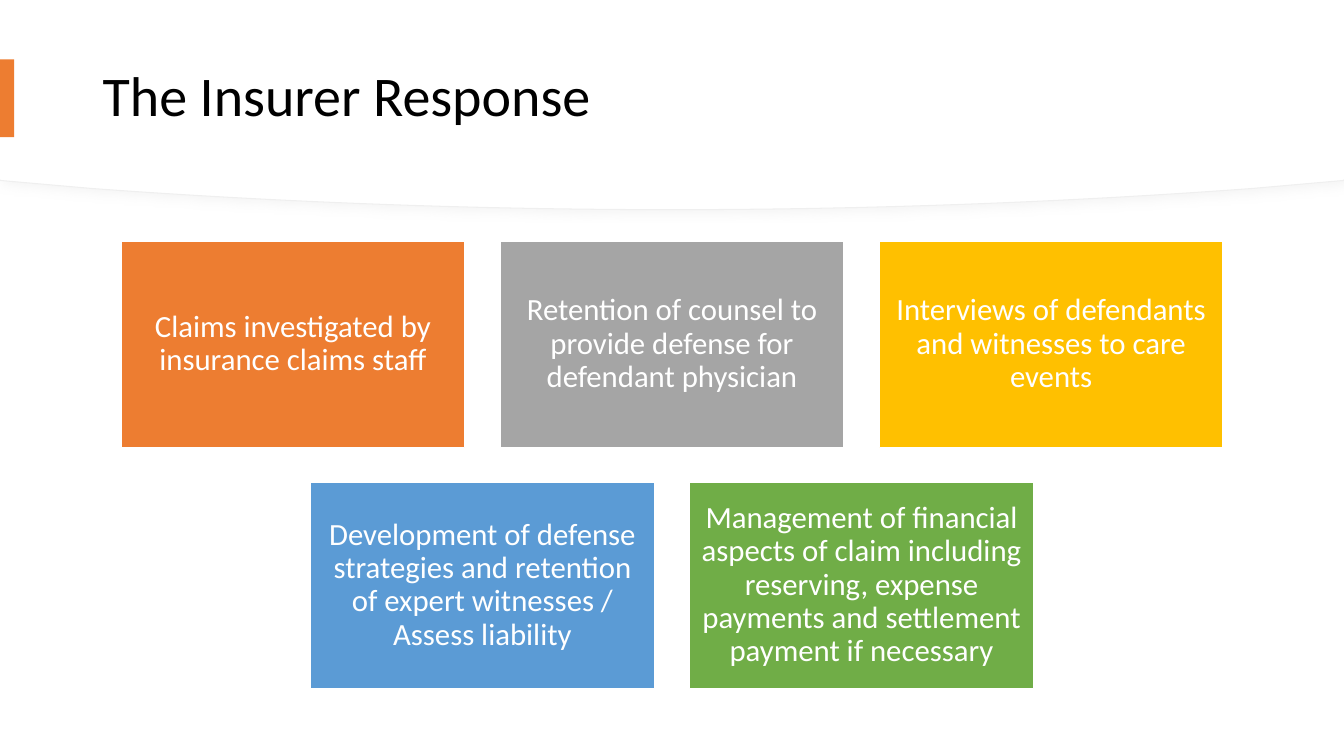
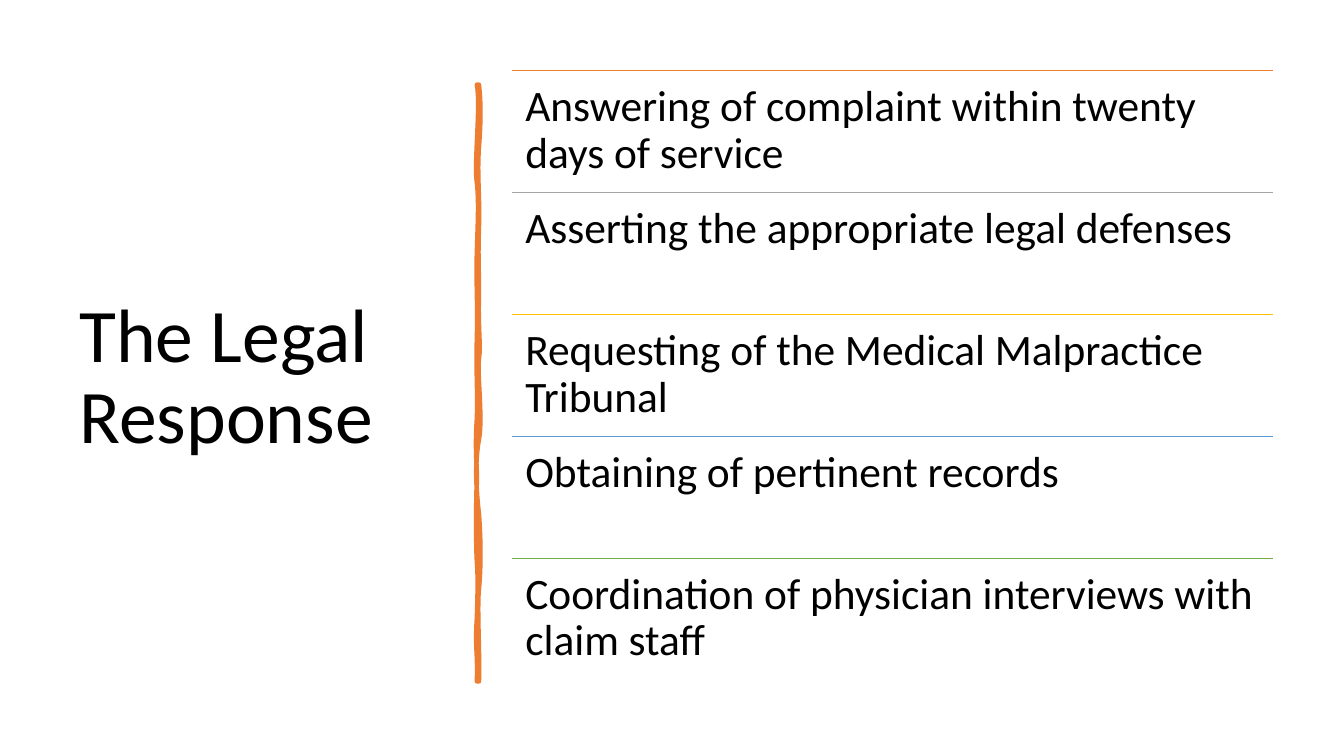
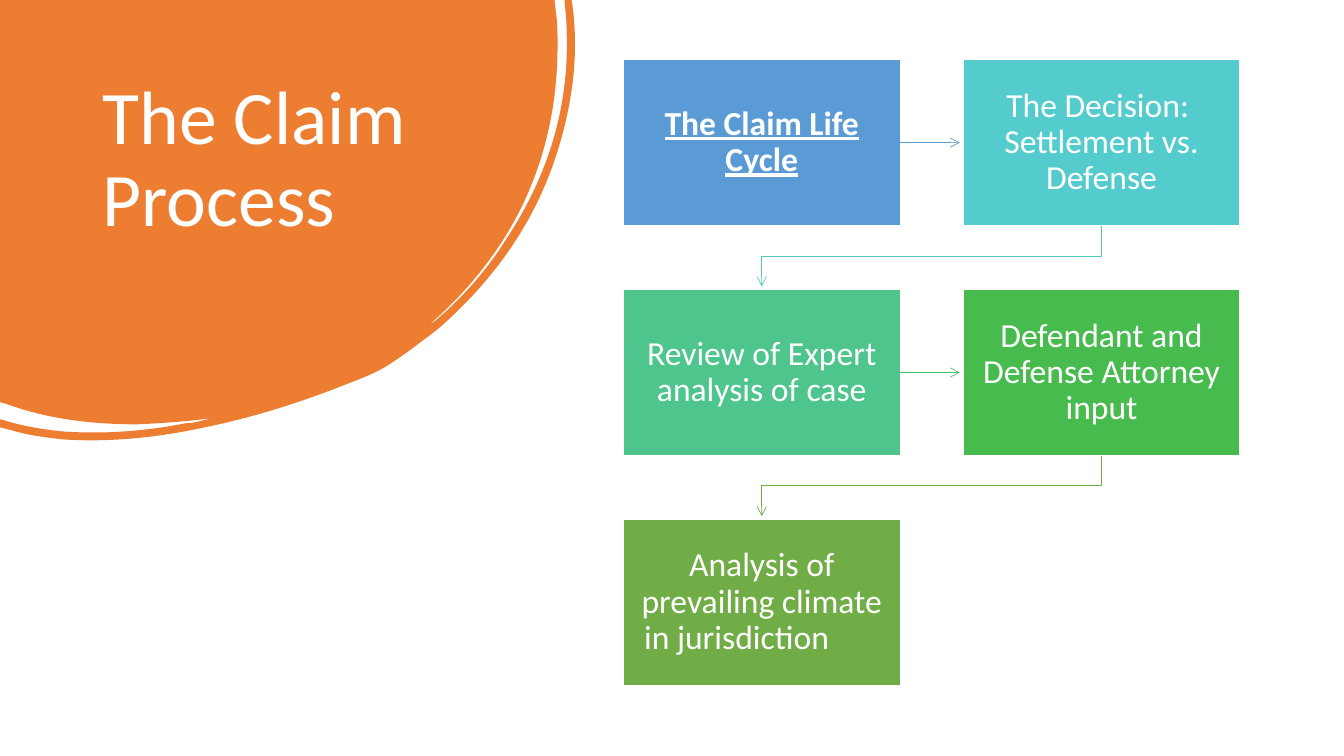
import collections
import dataclasses

import lxml.etree
import pptx
import pptx.dml.color
import pptx.enum.shapes
import pptx.enum.text
import pptx.oxml.ns
import pptx.util

SCALE = 9144
TAB_PER_POINT = 44450
ALIGN = pptx.enum.text.PP_ALIGN
ANCHOR = pptx.enum.text.MSO_ANCHOR
CONNECTOR = pptx.enum.shapes.MSO_CONNECTOR
Box = collections.namedtuple("Box", "x y w h")


@dataclasses.dataclass(frozen=True)
class Theme:
    """Colours, font and type sizes shared by the deck."""

    font: str = "Calibri"
    black: str = "000000"
    white: str = "FFFFFF"
    orange: str = "ED7D31"
    gray: str = "A5A5A5"
    gold: str = "FFC000"
    blue: str = "5B9BD5"
    green: str = "70AD47"
    cyan: str = "54CCCD"
    teal: str = "52CAB8"
    mint: str = "4DC58D"
    leaf: str = "49BF64"
    grass: str = "48BB4F"
    hairline: str = "EFEFEF"
    shade: str = "D9D9D9"
    header_size: int = 40
    title_size: int = 54
    card_size: int = 22
    row_size: int = 31
    step_size: int = 24


THEME = Theme()
PAGE = Box(0, 0, 1333, 750)

BRUSH = [
    (4, 0), (6, 18, 6, 35, 4, 62), (2, 89, 5, 111, 4, 142),
    (3, 173, 4, 178, 4, 210), (3, 241, 6, 258, 4, 272),
    (2, 286, 8, 330, 4, 352), (0, 373, 1, 400, 4, 426),
    (6, 452, 6, 480, 4, 500), (2, 519, 5, 566, 4, 592), (2, 592),
    (3, 562, 0, 560, 2, 529), (3, 499, 3, 486, 2, 473),
    (1, 460, 1, 411, 2, 393), (2, 375, 0, 361, 2, 331),
    (3, 302, 1, 289, 2, 251), (3, 214, 1, 197, 2, 166),
    (3, 134, 4, 116, 2, 97), (-1, 79, 6, 20, 2, 0),
]

BLOB = [
    (0, 0), (550, 0), (552, 17), (553, 26, 553, 36, 553, 45),
    (553, 101, 542, 154, 518, 204), (496, 249, 465, 288, 427, 321),
    (429, 321, 430, 319, 432, 318), (459, 295, 482, 269, 501, 239),
    (543, 176, 565, 107, 562, 30), (562, 21, 561, 12, 560, 3),
    (560, 0), (567, 0), (568, 7), (574, 54, 568, 102, 553, 150),
    (533, 214, 497, 268, 448, 314), (439, 323, 429, 331, 419, 338),
    (409, 346, 399, 353, 387, 361), (375, 369, 360, 375, 344, 381),
    (299, 399, 252, 414, 203, 424), (157, 434, 110, 439, 63, 436),
    (45, 434, 28, 432, 12, 427), (0, 424), (0, 416), (4, 417),
    (23, 423, 42, 426, 61, 428), (103, 431, 143, 428, 184, 420),
    (189, 420, 193, 419, 198, 418), (202, 417, 206, 416, 210, 415),
    (186, 418, 161, 420, 136, 421), (92, 421, 48, 416, 7, 401), (0, 399),
]


def px(length):
    """Turn pixels into EMU."""
    return pptx.util.Emu(round(length * SCALE))


def place(box):
    """Give the four EMU lengths of a box."""
    return [px(length) for length in box]


def color(value):
    """Turn a hex string into a colour."""
    return pptx.dml.color.RGBColor.from_string(value)


def add_xml(parent, tag, **attributes):
    """Append a namespaced child element."""
    return lxml.etree.SubElement(parent, pptx.oxml.ns.qn(tag), **attributes)


def write(shape, text, *, size, ink=THEME.black, bold=False, underline=None,
          align=ALIGN.LEFT, anchor=ANCHOR.TOP, inset=(10, 5)):
    """Put one formatted paragraph into a shape."""
    frame = shape.text_frame
    frame.word_wrap = True
    frame.vertical_anchor = anchor
    frame.margin_left = frame.margin_right = px(inset[0])
    frame.margin_top = frame.margin_bottom = px(inset[1])
    para = frame.paragraphs[0]
    para.alignment = align
    para.line_spacing = 0.9
    para._p.get_or_add_pPr().set("defTabSz", str(size * TAB_PER_POINT))
    span = para.add_run()
    span.text = text
    span.font.name = THEME.font
    span.font.size = pptx.util.Pt(size)
    span.font.color.rgb = color(ink)
    span.font.bold = bold
    span.font.underline = underline


def add_text(page, box, text, **style):
    """Add a text box."""
    write(page.shapes.add_textbox(*place(box)), text, **style)


def paint(shape, fill, line=None, width=1):
    """Set fill and outline and drop the shadow."""
    shape.shadow.inherit = False
    shape.fill.solid()
    shape.fill.fore_color.rgb = color(fill)
    if line:
        shape.line.color.rgb = color(line)
        shape.line.width = pptx.util.Pt(width)
    else:
        shape.line.fill.background()


def add_rectangle(page, box, fill, line=None):
    """Add a plain rectangle."""
    kind = pptx.enum.shapes.MSO_SHAPE.RECTANGLE
    shape = page.shapes.add_shape(kind, *place(box))
    paint(shape, fill, line)
    return shape


def add_card(page, box, text, fill, **style):
    """Add a filled rectangle with centred white text."""
    card = add_rectangle(page, box, fill, THEME.white)
    write(card, text, ink=THEME.white, align=ALIGN.CENTER,
          anchor=ANCHOR.MIDDLE, **style)
    return card


def add_outline(page, box, outline, fill, line=None, width=1):
    """Add a closed freeform of lines and cubic curves relative to the box."""
    ends = [(px(segment[-2]), px(segment[-1])) for segment in outline]
    builder = page.shapes.build_freeform(*ends[0], scale=1.0)
    builder.add_line_segments(ends[1:], close=True)
    shape = builder.convert_to_shape(px(box.x), px(box.y))
    left, top = (min(axis) for axis in zip(*ends))
    sides = list(shape._element.spPr.iter(pptx.oxml.ns.qn("a:lnTo")))
    for side, segment in zip(sides, outline[1:]):
        if len(segment) == 6:
            curve = lxml.etree.Element(pptx.oxml.ns.qn("a:cubicBezTo"))
            for x, y in zip(segment[::2], segment[1::2]):
                add_xml(curve, "a:pt", x=str(px(x) - left), y=str(px(y) - top))
            side.getparent().replace(side, curve)
    paint(shape, fill, line, width)
    return shape


def add_line(page, kind, start, end, ink, width, arrow=False):
    """Add a connector without a shadow."""
    line = page.shapes.add_connector(kind, *place((*start, *end)))
    line.line.color.rgb = color(ink)
    line.line.width = pptx.util.Pt(width)
    properties = line._element.spPr
    if arrow:
        add_xml(properties.find(pptx.oxml.ns.qn("a:ln")), "a:tailEnd", type="arrow")
    add_xml(properties, "a:effectLst")
    return line


def add_drop(page, start, end, ink):
    """Add an elbow arrow that leaves downward and arrives downward."""
    middle_x, middle_y = (start[0] + end[0]) / 2, (start[1] + end[1]) / 2
    across, down = abs(start[0] - end[0]) / 2, (end[1] - start[1]) / 2
    elbow = add_line(page, CONNECTOR.ELBOW,
                     (middle_x - down, middle_y - across),
                     (middle_x + down, middle_y + across), ink, 0.5, arrow=True)
    elbow._element.spPr.find(pptx.oxml.ns.qn("a:xfrm")).set("rot", "5400000")


def add_header(page, box, title):
    """Add the curved header band with its title and side tab."""
    for rise, line in ((0, THEME.hairline), (1, None)):
        side, knee, bend, base = (box.h - drop - rise for drop in (29, 21, 8, 0))
        outline = [
            (0, 0), (box.w, 0), (box.w, side), (box.w - 91, knee),
            (box.w - 268, bend, box.w - 462, base, box.w / 2, base),
            (463, base, 268, bend, 91, knee), (0, side)]
        band = add_outline(page, box, outline, THEME.white, line, 0.75)
        if line:
            effects = band._element.spPr.find(pptx.oxml.ns.qn("a:effectLst"))
            shadow = add_xml(effects, "a:outerShdw", blurRad="88900",
                             dist="38100", dir="2700000", algn="tl", rotWithShape="0")
            tint = add_xml(shadow, "a:srgbClr", val=THEME.shade)
            add_xml(tint, "a:alpha", val="25000")
    add_text(page, Box(box.x + 92, box.y + 28, 1150, 139), title,
             size=THEME.header_size, anchor=ANCHOR.MIDDLE)
    add_rectangle(page, Box(box.x, box.y + 59, 14, 77), THEME.orange)


def add_card_rows(page, box, rows):
    """Lay out rows of equal cards, each row centred in the box."""
    width, height, gap_x, gap_y = 341, 205, 35, 34
    for number, row in enumerate(rows):
        row_width = len(row) * (width + gap_x) - gap_x
        left = box.x + (box.w - row_width) / 2
        top = box.y + number * (height + gap_y)
        for column, (text, fill) in enumerate(row):
            add_card(page, Box(left + column * (width + gap_x), top, width, height),
                     text, fill, size=THEME.card_size, inset=(9, 9))


def add_ruled_list(page, box, items):
    """Lay out equal rows of text, each under a coloured rule."""
    height = box.h / len(items)
    for number, (text, ink) in enumerate(items):
        top = box.y + number * height
        add_line(page, CONNECTOR.STRAIGHT, (box.x, top), (box.x + box.w, top), ink, 1)
        add_text(page, Box(box.x, top, box.w, height), text,
                 size=THEME.row_size, inset=(13, 13))


def add_flow(page, box, steps, arrows):
    """Lay out steps in two columns and join them in reading order."""
    width, height, gap_x, gap_y, clearance = 275, 165, 62, 63, 3
    places, cards = [], []
    for number, (text, fill, style) in enumerate(steps):
        row, column = divmod(number, 2)
        spot = Box(box.x + column * (width + gap_x),
                   box.y + row * (height + gap_y), width, height)
        places.append(spot)
        cards.append(add_card(page, spot, text, fill, size=THEME.step_size,
                              inset=(13, 14), **style))
    for number, ink in enumerate(arrows):
        here, there = places[number], places[number + 1]
        if here.y == there.y:
            middle = here.y + height / 2
            arrow = add_line(page, CONNECTOR.STRAIGHT, (here.x + width, middle),
                             (there.x - clearance, middle), ink, 0.5, arrow=True)
            arrow.begin_connect(cards[number], 3)
        else:
            add_drop(page, (here.x + width / 2, here.y + height),
                     (there.x + width / 2, there.y - clearance), ink)


def build_insurer_page(page):
    """Fill the insurer response slide."""
    add_header(page, Box(0, 0, PAGE.w, 208), "The Insurer Response")
    add_card_rows(page, Box(120, 239, 1093, 444), [
        [("Claims investigated by insurance claims staff", THEME.orange),
         ("Retention of counsel to provide defense for defendant physician",
          THEME.gray),
         ("Interviews of defendants and witnesses to care events", THEME.gold)],
        [("Development of defense strategies and retention of expert witnesses"
          " / Assess liability", THEME.blue),
         ("Management of financial aspects of claim including reserving, expense"
          " payments and settlement payment if necessary", THEME.green)],
    ])


def build_legal_page(page):
    """Fill the legal response slide."""
    add_text(page, Box(69, 70, 374, 611), "The Legal Response",
             size=THEME.title_size, anchor=ANCHOR.MIDDLE)
    add_outline(page, Box(471, 84, 8, 592), BRUSH, THEME.orange, THEME.orange, 3.25)
    add_ruled_list(page, Box(508, 70, 755, 605), [
        ("Answering of complaint within twenty days of service", THEME.orange),
        ("Asserting the appropriate legal defenses", THEME.gray),
        ("Requesting of the Medical Malpractice Tribunal", THEME.gold),
        ("Obtaining of pertinent records", THEME.blue),
        ("Coordination of physician interviews with claim staff", THEME.green),
    ])


def build_claim_page(page):
    """Fill the claim process slide."""
    add_outline(page, Box(0, 0, 571, 437), BLOB, THEME.orange)
    add_text(page, Box(92, 74, 352, 222), "The Claim Process",
             size=THEME.title_size, ink=THEME.white)
    add_flow(page, Box(618, 59, 612, 621), [
        ("The Claim Life Cycle", THEME.blue, {"bold": True, "underline": True}),
        ("The Decision:  Settlement vs. Defense", THEME.cyan, {}),
        ("Review of Expert analysis of case", THEME.mint, {}),
        ("Defendant and Defense Attorney input", THEME.grass, {}),
        ("Analysis of prevailing climate in jurisdiction\t", THEME.green, {}),
    ], [THEME.blue, THEME.teal, THEME.leaf, THEME.green])


def main():
    """Build and save the deck."""
    deck = pptx.Presentation()
    deck.slide_width, deck.slide_height = px(PAGE.w), px(PAGE.h)
    for build in (build_insurer_page, build_legal_page, build_claim_page):
        build(deck.slides.add_slide(deck.slide_layouts[6]))
    deck.save("out.pptx")


if __name__ == "__main__":
    main()
